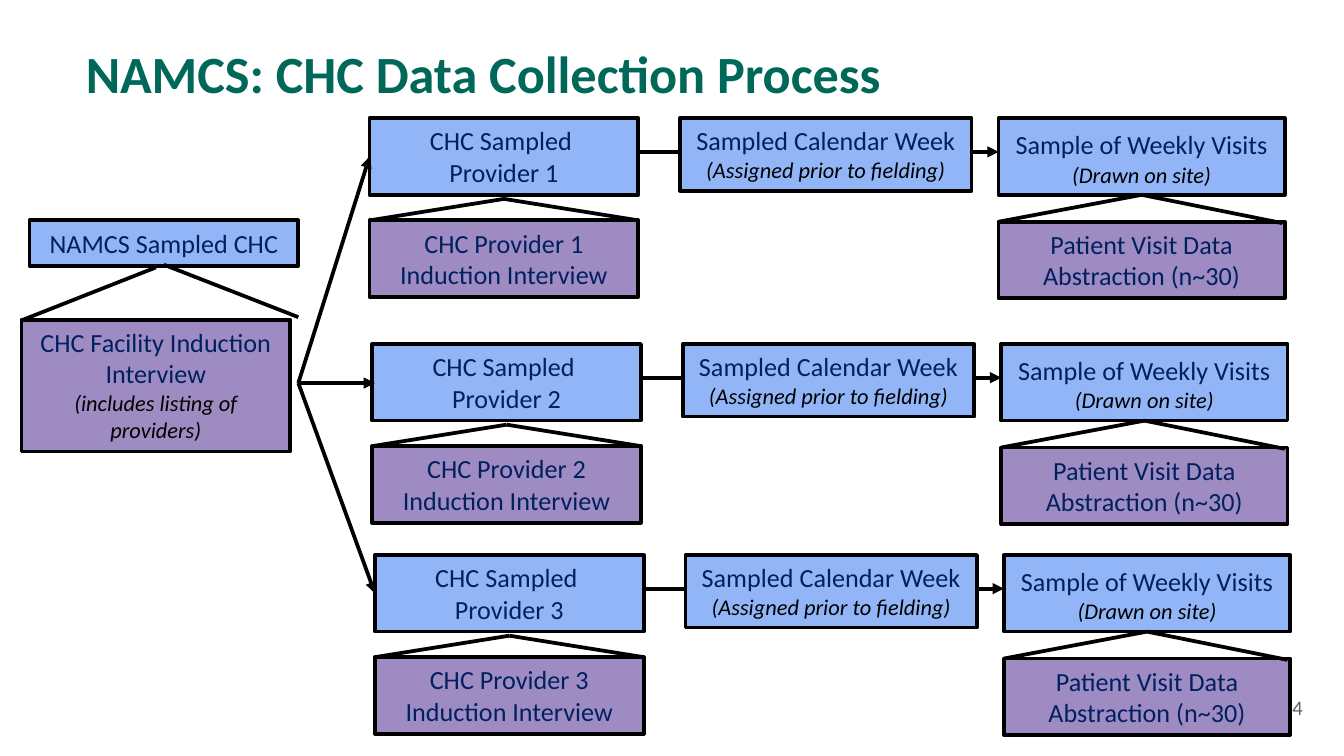
from lxml import etree
from pptx import Presentation
from pptx.dml.color import RGBColor
from pptx.enum.shapes import MSO_CONNECTOR, MSO_SHAPE
from pptx.enum.text import MSO_ANCHOR, PP_ALIGN
from pptx.oxml.ns import qn
from pptx.util import Inches, Pt

STRAIGHT = MSO_CONNECTOR.STRAIGHT
RECTANGLE = MSO_SHAPE.RECTANGLE
CENTER = PP_ALIGN.CENTER
TOP = MSO_ANCHOR.TOP
BOTTOM = MSO_ANCHOR.BOTTOM
BOTTOM_SIDE, LEFT_SIDE = 2, 1

BLUE, PURPLE, BLACK = "92B5F7", "9E8BC1", "000000"
LABEL = {"size": Pt(14), "color": "002060"}
NOTE = {"size": Pt(12), "color": BLACK, "italic": True}
GAP = {"size": Pt(16), "color": "002060"}
HEADING = {"size": Pt(28), "color": "006858", "bold": True}
NUMBER = {"size": Pt(11), "color": "5F5F5F"}

deck = Presentation()
deck.slide_width = Inches(10)
deck.slide_height = Inches(10 * 9 / 16)
page = deck.slides.add_slide(deck.slide_layouts[6])


def add_text(place, paragraphs, fill=None):
    area = [Inches(value) for value in place]
    if fill:
        box = page.shapes.add_shape(RECTANGLE, *area)
        box.shadow.inherit = False
        box.fill.solid()
        box.fill.fore_color.rgb = RGBColor.from_string(fill)
        box.line.color.rgb = RGBColor.from_string(BLACK)
        box.line.width = Pt(2)
    else:
        box = page.shapes.add_textbox(*area)
    frame = box.text_frame
    frame.word_wrap = True
    frame.vertical_anchor = TOP
    for index, runs in enumerate(paragraphs):
        para = frame.add_paragraph() if index else frame.paragraphs[0]
        if fill:
            para.alignment = CENTER
        for text, style in runs:
            span = para.add_run()
            span.text = text
            span.font.name = "Calibri"
            for name, value in style.items():
                if name == "color":
                    span.font.color.rgb = RGBColor.from_string(value)
                else:
                    setattr(span.font, name, value)
    return box


def add_line(start, end, arrow=False):
    points = [Inches(value) for value in (*start, *end)]
    line = page.shapes.add_connector(STRAIGHT, *points)
    line.line.color.rgb = RGBColor.from_string(BLACK)
    line.line.width = Pt(2)
    if arrow:
        etree.SubElement(line.line._get_or_add_ln(), qn("a:tailEnd"), type="triangle")
    etree.SubElement(line._element.spPr, qn("a:effectLst"))
    return line


add_text((9.44, 5.12, 0.41, 0.29), [[("14", NUMBER)]])
title = add_text((0.54, 0.15, 9, 0.67), [[("NAMCS: CHC Data Collection Process", HEADING)]])
title.text_frame.vertical_anchor = BOTTOM
title.text_frame.paragraphs[0].line_spacing = Pt(30)

add_text((0.22, 1.64, 2, 0.34), [[("NAMCS Sampled CHC", LABEL)]], BLUE)
add_text(
    (0.16, 2.38, 2, 0.98),
    [
        [("CHC Facility Induction Interview", LABEL)],
        [("(includes listing of providers)", NOTE)],
    ],
    PURPLE,
)
add_line((1.16, 1.99), (0.17, 2.38))
add_line((1.22, 1.97), (2.22, 2.36))

providers = []
for number, (left, top) in enumerate([(2.75, 0.88), (2.77, 2.56), (2.79, 4.13)], 1):
    week_left, visits_left = left + 2.31, left + 4.68
    flow = top + 0.25
    provider = add_text(
        (left, top, 2, 0.57),
        [[("CHC Sampled ", LABEL)], [(f"Provider {number}", LABEL)]],
        BLUE,
    )
    providers.append(provider)
    add_text(
        (left, top + 0.76, 2, 0.57),
        [[(f"CHC Provider {number} Induction Interview", LABEL)]],
        PURPLE,
    )
    for corner in (left, left + 2):
        add_line((left + 1, top + 0.6), (corner, top + 0.76))

    add_text(
        (week_left, top, 2.17, 0.54),
        [[("Sampled Calendar Week ", LABEL), ("(Assigned prior to fielding)", NOTE)]],
        BLUE,
    )
    add_line((left + 2, flow), (week_left, flow))

    visits = add_text(
        (visits_left, top, 2.13, 0.57),
        [[("Sample of Weekly Visits", LABEL), (" ", GAP), ("(Drawn on site)", NOTE)]],
        BLUE,
    )
    add_text(
        (visits_left, top + 0.77, 2.13, 0.57),
        [[("Patient Visit Data Abstraction (n~30)", LABEL)]],
        PURPLE,
    )
    for end in ((visits_left, top + 0.77), (visits_left + 2.11, top + 0.78)):
        branch = add_line((visits_left + 1.06, top + 0.57), end)
        branch.begin_connect(visits, BOTTOM_SIDE)
    add_line((week_left + 2.17, flow), (visits_left, flow), arrow=True)

hub = (2.22, 2.85)
for provider, end in ((providers[0], (2.75, 1.17)), (providers[2], (2.79, 4.42))):
    arrow = add_line(hub, end, arrow=True)
    arrow.end_connect(provider, LEFT_SIDE)
add_line(hub, (2.79, 2.85), arrow=True)

deck.save("out.pptx")
